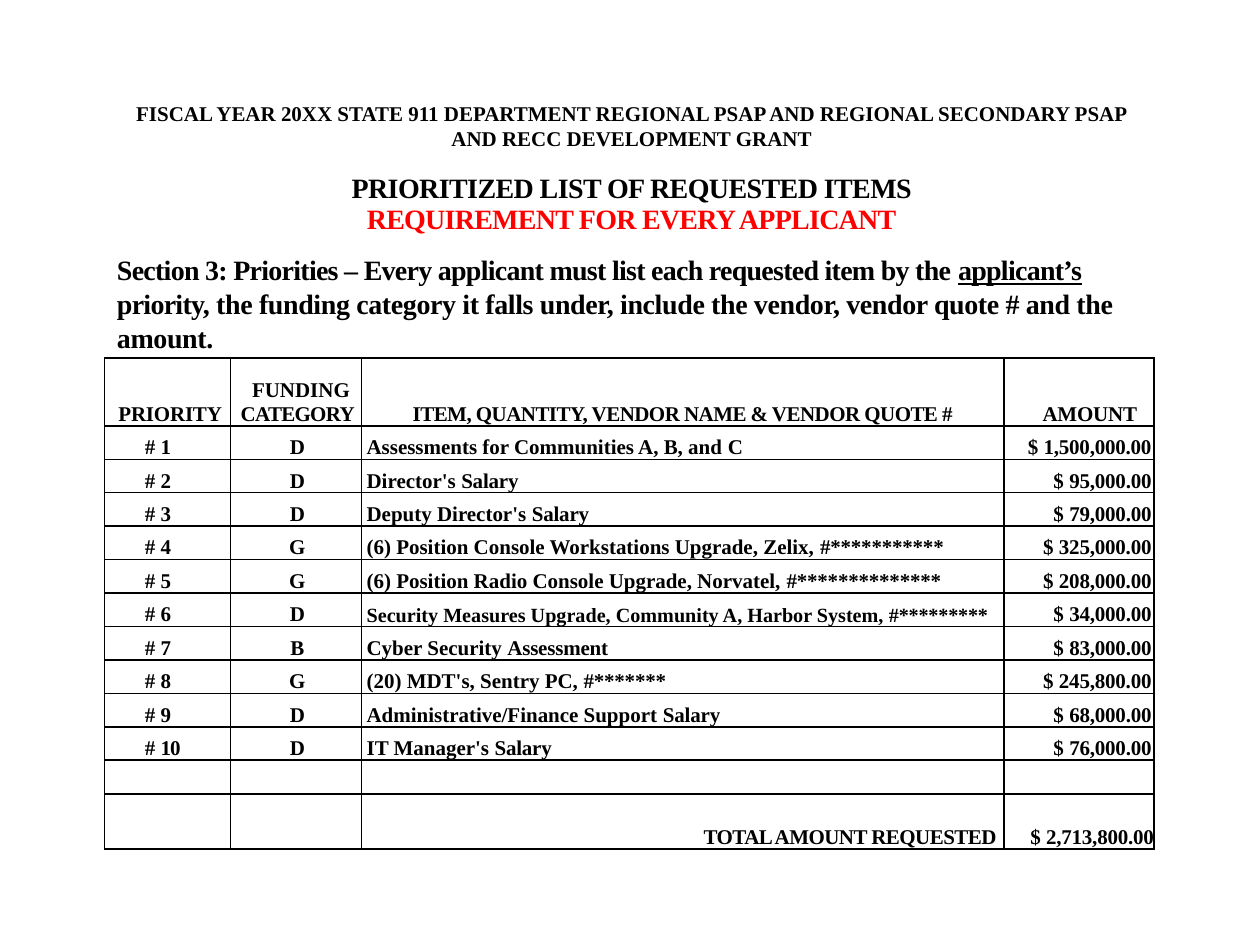
from lxml.etree import SubElement
from pptx import Presentation
from pptx.dml.color import RGBColor
from pptx.enum.text import MSO_ANCHOR, PP_ALIGN as Align
from pptx.oxml.ns import qn
from pptx.util import Inches, Pt

BLACK = RGBColor(0, 0, 0)
RED = RGBColor(255, 0, 0)
FONT = "Times New Roman"

COLUMN_WIDTHS = [1, 1.04, 5.1, 1.19]
HEADER_HEIGHT, TOTAL_HEIGHT, TABLE_HEIGHT = 0.54, 0.44, 3.9

ITEMS = [
    ("D", "Assessments for Communities A, B, and C", "1,500,000.00"),
    ("D", "Director's Salary", "95,000.00"),
    ("D", "Deputy Director's Salary", "79,000.00"),
    ("G", "(6) Position Console Workstations Upgrade, Zelix, #***********", "325,000.00"),
    ("G", "(6) Position Radio Console Upgrade, Norvatel, #**************", "208,000.00"),
    ("D", "Security Measures Upgrade, Community A, Harbor System, #*********", "34,000.00"),
    ("B", "Cyber Security Assessment", "83,000.00"),
    ("G", "(20) MDT's, Sentry PC, #*******", "245,800.00"),
    ("D", "Administrative/Finance Support Salary", "68,000.00"),
    ("D", "IT Manager's Salary", "76,000.00"),
]


def tighten_last_word(text, spacing):
    """Split text into runs so that only its last word is condensed."""
    head, gap, last = text.rpartition(" ")
    return [(head + gap, 0), (last, spacing)]


class GrantSlide:
    """Holds the text style and the slide being built."""

    def __init__(self, presentation):
        self.slide = presentation.slides.add_slide(presentation.slide_layouts[6])

    def fill_paragraph(self, paragraph, runs, size=12, color=BLACK, align=Align.LEFT,
                       line=None, before=None, indent=0, first_line=0):
        """Fill a paragraph with (text, letter spacing[, underline]) runs."""
        paragraph.alignment = align
        if line:
            paragraph.line_spacing = Pt(line)
        if before:
            paragraph.space_before = Pt(before)
        properties = paragraph._p.get_or_add_pPr()
        properties.set("marL", str(Inches(indent)))
        properties.set("indent", str(Inches(first_line)))
        for text, spacing, *underline in runs:
            run = paragraph.add_run()
            run.text = text
            run.font.name = FONT
            run.font.size = Pt(size)
            run.font.bold = True
            run.font.color.rgb = color
            if underline:
                run.font.underline = True
            run._r.get_or_add_rPr().set("spc", str(round(spacing * 100)))

    def text_box(self, left, top, width, height, paragraphs):
        box = self.slide.shapes.add_textbox(*map(Inches, (left, top, width, height)))
        frame = box.text_frame
        frame.word_wrap = True
        frame.margin_left, frame.margin_right = Inches(0.1), Inches(0.29)
        for index, (runs, style) in enumerate(paragraphs):
            paragraph = frame.add_paragraph() if index else frame.paragraphs[0]
            self.fill_paragraph(paragraph, runs, **style)

    def table(self, left, top, widths, heights):
        frame = self.slide.shapes.add_table(
            len(heights), len(widths), Inches(left), Inches(top),
            Inches(sum(widths)), Inches(sum(heights)))
        table = frame.table
        table.first_row = table.horz_banding = False
        for column, width in zip(table.columns, widths):
            column.width = Inches(width)
        for row, height in zip(table.rows, heights):
            row.height = Inches(height)
        last = len(heights) - 1
        for index, row in enumerate(table.rows):
            for cell in row.cells:
                self.style_cell(cell, 1.5 if index == last else 1,
                                1.5 if index == last - 1 else 1)
        return table

    def style_cell(self, cell, top, bottom):
        cell.margin_left = cell.margin_right = cell.margin_top = cell.margin_bottom = 0
        cell.vertical_anchor = MSO_ANCHOR.BOTTOM
        properties = cell._tc.get_or_add_tcPr()
        for side, width in (("lnL", 1), ("lnR", 1), ("lnT", top), ("lnB", bottom)):
            border = SubElement(properties, qn(f"a:{side}"), w=str(Pt(width)))
            fill = SubElement(border, qn("a:solidFill"))
            SubElement(fill, qn("a:srgbClr"), val=str(BLACK))
        cell.fill.background()
        # Keeps empty cells from stretching their row.
        cell.text_frame.paragraphs[0]._p.get_or_add_endParaRPr().set("sz", "1200")

    def cell(self, cell, runs, right=0, **style):
        cell.margin_right = Inches(right)
        self.fill_paragraph(cell.text_frame.paragraphs[0], runs, **style)


def add_headings(page):
    title = dict(size=16, align=Align.CENTER, line=18, indent=0.14)
    page.text_box(0.83, 0.75, 8.42, 2.42, [
        ([("FISCAL YEAR 20XX STATE 911 DEPARTMENT REGIONAL PSAP AND REGIONAL "
           "SECONDARY PSAP AND RECC DEVELOPMENT GRANT", 0)],
         dict(align=Align.CENTER, line=14.3, indent=0.14)),
        ([("PRIORITIZED LIST OF REQUESTED ITEMS", -0.3)], dict(title, before=12.5)),
        ([("REQUIREMENT FOR EVERY APPLICANT", -0.4)], dict(title, color=RED)),
        ([("Section 3: Priorities – Every applicant must list each requested item by the ", -0.4),
          ("applicant’s", -0.4, True),
          (" priority, ", -0.4),
          ("the funding category it falls under, include the vendor, vendor quote # "
           "and the amount.", -0.2)],
         dict(size=16, line=19.4, before=9.7)),
    ])


def add_priorities(page):
    body_rows = len(ITEMS) + 1
    body_height = (TABLE_HEIGHT - HEADER_HEIGHT - TOTAL_HEIGHT) / body_rows
    heights = [HEADER_HEIGHT] + [body_height] * body_rows + [TOTAL_HEIGHT]
    table = page.table(0.83, 2.84, COLUMN_WIDTHS, heights)

    priority, category, item, amount = table.rows[0].cells
    page.cell(priority, [("PRIORITY", -0.1)], line=12.8, indent=0.11)
    page.cell(category, [("FUNDING ", 0), ("CATEGORY", -0.4)], line=13.5,
              indent=0.08, first_line=0.09)
    page.cell(item, [("ITEM, QUANTITY, VENDOR NAME & VENDOR QUOTE #", -0.3)],
              line=12.8, align=Align.CENTER)
    page.cell(amount, [("AMOUNT", -0.1)], line=12.8, align=Align.CENTER, indent=0.17)

    for number, (letter, name, price) in enumerate(ITEMS, 1):
        priority, category, item, amount = table.rows[number].cells
        page.cell(priority, tighten_last_word(f"# {number}", -0.5), line=12.8, indent=0.32)
        page.cell(category, [(letter, 0)], line=11.2, align=Align.CENTER, indent=0.02)
        page.cell(item, tighten_last_word(name, -0.1), line=11.4, indent=0.04,
                  size=11.5 if name.startswith("Security") else 12)
        page.cell(amount, tighten_last_word(f"$ {price}", -0.1), line=11.4,
                  align=Align.RIGHT, right=0.02)

    label, total = list(table.rows[len(heights) - 1].cells)[2:]
    page.cell(label, [("TOTAL AMOUNT REQUESTED", -0.3)], line=12.9,
              align=Align.RIGHT, right=0.06)
    page.cell(total, tighten_last_word("$ 2,713,800.00", -0.1), align=Align.RIGHT)


def main():
    presentation = Presentation()
    presentation.slide_width, presentation.slide_height = Inches(10), Inches(7.5)
    page = GrantSlide(presentation)
    add_headings(page)
    add_priorities(page)
    presentation.save("out.pptx")


if __name__ == "__main__":
    main()
